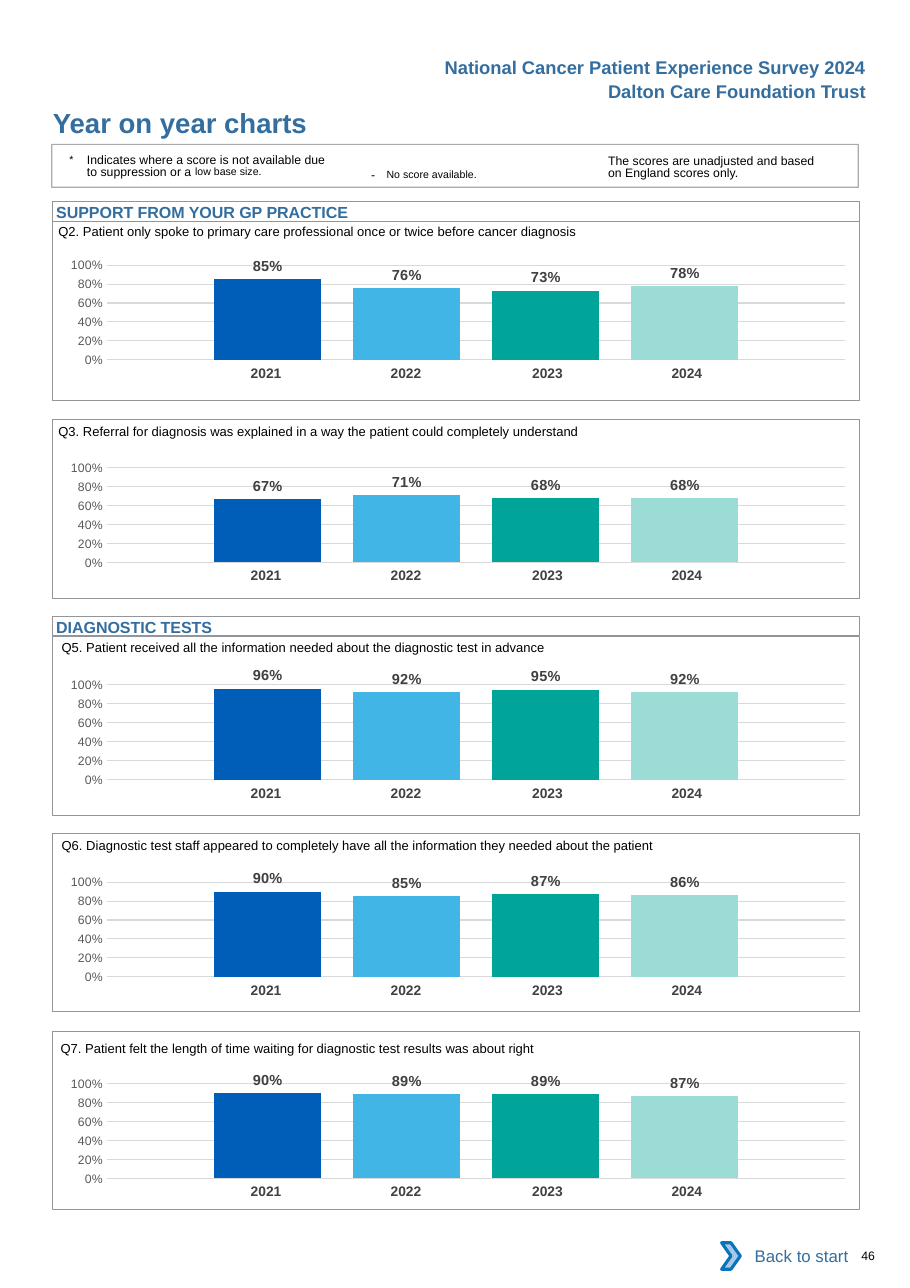
"""Builds the year on year charts page of a patient survey report."""
from lxml.etree import SubElement
from pptx import Presentation
from pptx.chart.data import CategoryChartData as ChartData
from pptx.dml.color import RGBColor
from pptx.enum.chart import XL_CHART_TYPE as CT, XL_LABEL_POSITION as LP, XL_TICK_MARK as TM
from pptx.enum.shapes import MSO_SHAPE as SH
from pptx.enum.text import MSO_ANCHOR as VA, PP_ALIGN as AL
from pptx.oxml.ns import qn
from pptx.util import Inches, Pt

rgb = RGBColor.from_string
prs = Presentation()
prs.slide_width, prs.slide_height = Inches(8.26), Inches(11.69)
s = prs.slides.add_slide(prs.slide_layouts[6])
U = prs.slide_width // 826

BLUE, GREY, BLACK = "336E9F", "939598", "000000"
YEARS = {"2021": "005EB8", "2022": "41B6E6", "2023": "00A499", "2024": "9CDCD7"}
LEFT, WIDE = 48, 732


def write(tf, runs, size, color=BLACK, bold=False, align=AL.LEFT, ins=(0, 0, 0, 0), before=0):
    """Fill a text frame with one paragraph of (text, size, baseline) runs."""
    tf.word_wrap = True
    tf.vertical_anchor = VA.TOP
    tf.margin_left, tf.margin_top, tf.margin_right, tf.margin_bottom = [n * U for n in ins]
    p = tf.paragraphs[0]
    p.alignment, p.space_before = align, Pt(before)
    for text, run_size, base in [(runs, size, 0)] if isinstance(runs, str) else runs:
        r = p.add_run()
        r.text = text
        r.font.name, r.font.size, r.font.bold = "Arial", Pt(run_size), bold
        r.font.color.rgb = rgb(color)
        if base:
            r.font._element.set("baseline", str(base * 1000))
    return p


def shape(kind, x, y, w, h, line=None, weight=0.5, fill=None):
    """Add a flat preset shape placed on the grid."""
    sp = s.shapes.add_shape(kind, x * U, y * U, w * U, h * U)
    sp.shadow.inherit = False
    if fill:
        sp.fill.solid()
        sp.fill.fore_color.rgb = rgb(fill)
    else:
        sp.fill.background()
    if line:
        sp.line.color.rgb = rgb(line)
        sp.line.width = Pt(weight)
    else:
        sp.line.fill.background()
    return sp


labels = [
    (300, 46, 496, 30, "National Cancer Patient Experience Survey 2024", 12, True, AL.RIGHT, (10, 5, 10, 5), 0),
    (300, 68, 496, 30, "Dalton Care Foundation Trust", 12, True, AL.RIGHT, (10, 5, 10, 5), 0),
    (48, 96, 450, 30, "Year on year charts", 18, True, AL.LEFT, (0, 0, 0, 0), 4.1),
]
for x, y, w, h, text, size, bold, align, ins, before in labels:
    tf = s.shapes.add_textbox(x * U, y * U, w * U, h * U).text_frame
    write(tf, text, size, BLUE, bold, align, ins, before)

key = shape(SH.RECTANGLE, 47, 131, WIDE, 39, GREY, 0.75)
alpha = SubElement(key.line._ln.find(".//" + qn("a:srgbClr")), qn("a:alpha"))
alpha.set("val", "80000")
notes = [
    (63, 138, 240, 27, [("*\t", 12, 3), ("Indicates where a score is not available due to suppression or a ", 8, 0),
                        ("low base size.", 12, 7)], (0, 3, 0, 0), 8.1),
    (327, 141, 183, 24, [("-\t", 8, 0), ("No score available.", 12, 3)], (10, 5, 10, 5), None),
    (552, 138, 201, 27, "The scores are unadjusted and based on England scores only.", (0, 3, 0, 0), 8.1),
]
for x, y, w, h, runs, ins, leading in notes:
    tf = s.shapes.add_textbox(x * U, y * U, w * U, h * U).text_frame
    p = write(tf, runs, 8, ins=ins, before=2.5)
    if leading:
        p.line_spacing = Pt(leading)
    if not isinstance(runs, str):
        pPr = p._p.get_or_add_pPr()
        hang = (16 if leading else 14) * U
        pPr.set("marL", str(hang))
        pPr.set("indent", str(-hang))

for y, text in [(183, "SUPPORT FROM YOUR GP PRACTICE"), (559, "DIAGNOSTIC TESTS")]:
    band = shape(SH.RECTANGLE, LEFT, y, WIDE, 18, GREY)
    write(band.text_frame, text, 10.5, BLUE, True, ins=(3, 1, 0, 0), before=0.5)

panels = [
    (201, 222, 53, 194, "Q2. Patient only spoke to primary care professional once or twice before cancer diagnosis",
     (0.85, 0.76, 0.73, 0.78)),
    (381, 406, 53, 375, "Q3. Referral for diagnosis was explained in a way the patient could completely understand",
     (0.67, 0.71, 0.68, 0.68)),
    (578, 603, 56, 571, "Q5. Patient received all the information needed about the diagnostic test in advance",
     (0.96, 0.92, 0.95, 0.92)),
    (756, 782, 56, 751, "Q6. Diagnostic test staff appeared to completely have all the information they needed "
     "about the patient", (0.9, 0.85, 0.87, 0.86)),
    (936, 965, 55, 935, "Q7. Patient felt the length of time waiting for diagnostic test results was about right",
     (0.9, 0.89, 0.89, 0.87)),
]
for top, chart_top, text_x, text_y, question, scores in panels:
    tf = s.shapes.add_textbox(text_x * U, text_y * U, 720 * U, 24 * U).text_frame
    write(tf, question, 8.5, ins=(0, 9, 0, 0), before=6.8)

    table = s.shapes.add_table(1, 4, 173 * U, (chart_top + 105) * U, 515 * U, 27 * U).table
    table.first_row = table.horz_banding = False
    for i, (year, width, right) in enumerate(zip(YEARS, (127, 127, 134, 127), (0, 0, 4, 12))):
        table.columns[i].width = width * U
        cell = table.cell(0, i)
        cell.fill.background()
        write(cell.text_frame, year, 9, "414042", True, AL.CENTER)
        cell.margin_left, cell.margin_right = 10 * U, right * U
        cell.margin_top = cell.margin_bottom = 5 * U

    data = ChartData(number_format="0%")
    data.categories = ["1"]
    for n, score in enumerate(scores, 1):
        data.add_series(f"Series {n}", [score])
    chart = s.shapes.add_chart(CT.COLUMN_CLUSTERED, 39 * U, chart_top * U, WIDE * U, 129 * U, data).chart
    chart.has_legend = chart.has_title = False
    chart.font.name, chart.font.size = "Calibri", Pt(10)
    chart.font.color.rgb = rgb(BLACK)

    root = chart.element
    back = SubElement(root, qn("c:spPr"))
    SubElement(back, qn("a:noFill"))
    SubElement(SubElement(back, qn("a:ln")), qn("a:noFill"))
    root.find(qn("c:txPr")).addprevious(back)
    area = root.find(".//" + qn("c:plotArea"))
    for old in area.findall(qn("c:layout")):
        area.remove(old)
    layout = SubElement(area, qn("c:layout"))
    area.insert(0, layout)
    manual = SubElement(layout, qn("c:manualLayout"))
    for tag, val in [("layoutTarget", "inner"), ("xMode", "edge"), ("yMode", "edge"),
                     ("x", "0.08"), ("y", "0.145"), ("w", "0.915"), ("h", "0.666")]:
        SubElement(manual, qn("c:" + tag)).set("val", val)

    chart.category_axis.visible = False
    axis = chart.value_axis
    axis.minimum_scale, axis.maximum_scale, axis.major_unit = 0, 1, 0.2
    axis.major_tick_mark = axis.minor_tick_mark = TM.NONE
    axis.format.line.fill.background()
    axis.major_gridlines.format.line.color.rgb = rgb("D9D9D9")
    axis.major_gridlines.format.line.width = Pt(0.75)
    ticks = axis.tick_labels
    ticks.number_format, ticks.number_format_is_linked = "0%", False
    ticks.font.name, ticks.font.size = "Arial", Pt(8)
    ticks.font.color.rgb = rgb("595959")

    plot = chart.plots[0]
    plot.gap_width, plot.overlap, plot.vary_by_categories = 200, -30, False
    for series, color in zip(plot.series, YEARS.values()):
        series.format.fill.solid()
        series.format.fill.fore_color.rgb = rgb(color)
        tags = series.data_labels
        tags.show_value, tags.position = True, LP.OUTSIDE_END
        tags.number_format, tags.number_format_is_linked = "0%", False
        tags.font.name, tags.font.size, tags.font.bold = "Arial", Pt(9.5), True
        tags.font.color.rgb = rgb("404040")

    shape(SH.RECTANGLE, LEFT, top, WIDE, 162, GREY)

back_button = shape(SH.RECTANGLE, 662, 1119, 118, 42, fill="FFFFFF")
write(back_button.text_frame, "Back to start", 11, BLUE, align=AL.RIGHT, ins=(10, 5, 10, 5))
back_button.text_frame.vertical_anchor = VA.MIDDLE
shape(SH.CHEVRON, 655, 1128, 17, 24, "0A74BB", 2, "A8C7E9")
page = s.shapes.add_textbox(772 * U, 1133 * U, 51 * U, 13 * U)
write(page.text_frame, "46", 8, ins=(10, 0, 0, 0))

prs.save("out.pptx")
